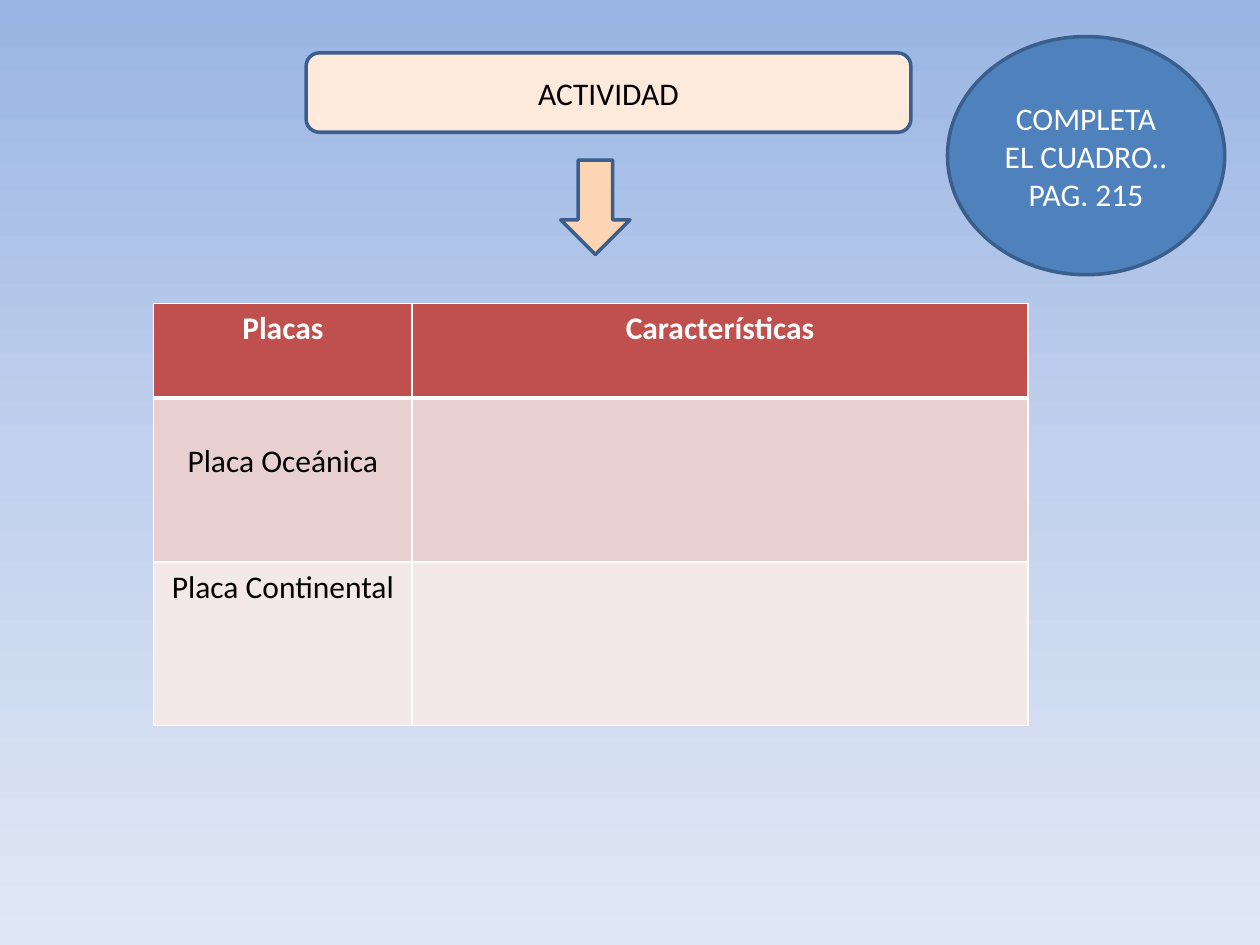
from copy import deepcopy
from dataclasses import dataclass

from lxml.etree import SubElement
from pptx import Presentation
from pptx.dml.color import RGBColor
from pptx.enum.shapes import MSO_SHAPE
from pptx.enum.text import MSO_ANCHOR, PP_ALIGN
from pptx.oxml.ns import qn
from pptx.util import Inches, Pt


@dataclass(frozen=True)
class Theme:
    """Colours and type sizes of the slide."""
    sky: tuple = ((0, "9AB5E4"), (0.5, "C2D1ED"), (1, "E1E8F5"))
    title: str = "FDEADA"
    arrow: str = "FCD5B5"
    note: str = "4F81BD"
    outline: str = "3A5F8C"
    header: str = "C0504D"
    bands: tuple = ("E8D0D0", "F4E9E9")
    dark: str = "000000"
    light: str = "FFFFFF"
    font: str = "Calibri"
    size: int = 18
    outline_width: int = 2
    border: int = 1
    header_border: int = 3


THEME = Theme()


def paint_background(slide):
    """Fill the slide with a three-stop gradient from top to bottom."""
    fill = slide.background.fill
    fill.gradient()
    fill.gradient_angle = 270
    stop_list = slide.element.find(".//" + qn("a:gsLst"))
    stop_list.append(deepcopy(stop_list[0]))
    for stop, (position, color) in zip(fill.gradient_stops, THEME.sky):
        stop.position = position
        stop.color.rgb = RGBColor.from_string(color)


def write_text(frame, lines, color, bold=False):
    """Write centred paragraphs into a text frame."""
    font_format = {"name": THEME.font, "size": Pt(THEME.size), "bold": bold}
    for index, line in enumerate(lines):
        paragraph = frame.add_paragraph() if index else frame.paragraphs[0]
        paragraph.alignment = PP_ALIGN.CENTER
        run = paragraph.add_run()
        run.text = line
        run.font.color.rgb = RGBColor.from_string(color)
        for key, value in font_format.items():
            setattr(run.font, key, value)


def add_figure(slide, preset, box, fill, lines=(), color=THEME.dark):
    """Place an outlined preset shape with optional text in the box."""
    figure = slide.shapes.add_shape(preset, *map(Inches, box))
    figure.shadow.inherit = False
    figure.fill.solid()
    figure.fill.fore_color.rgb = RGBColor.from_string(fill)
    figure.line.color.rgb = RGBColor.from_string(THEME.outline)
    figure.line.width = Pt(THEME.outline_width)
    frame_format = {"word_wrap": True, "vertical_anchor": MSO_ANCHOR.MIDDLE}
    for key, value in frame_format.items():
        setattr(figure.text_frame, key, value)
    write_text(figure.text_frame, lines, color)


def style_cell(cell, fill, bottom):
    """Give a cell its white borders and its fill."""
    properties = cell._tc.get_or_add_tcPr()
    widths = {"L": THEME.border, "R": THEME.border, "T": THEME.border, "B": bottom}
    for side, width in widths.items():
        border = SubElement(properties, qn(f"a:ln{side}"), w=str(Pt(width)))
        paint = SubElement(border, qn("a:solidFill"))
        SubElement(paint, qn("a:srgbClr"), val=THEME.light)
    cell.fill.solid()
    cell.fill.fore_color.rgb = RGBColor.from_string(fill)


def add_plates_table(slide, box, column_widths, row_heights, rows):
    """Place the table of plates, its header row first, in the box."""
    table = slide.shapes.add_table(
        len(rows), len(column_widths), *map(Inches, box)
    ).table
    for column, width in zip(table.columns, column_widths):
        column.width = Inches(width)
    for row, height in zip(table.rows, row_heights):
        row.height = Inches(height)
    fills = (THEME.header, *THEME.bands)
    for r, (texts, fill) in enumerate(zip(rows, fills)):
        is_header = r == 0
        bottom = THEME.header_border if is_header else THEME.border
        for c, text in enumerate(texts):
            cell = table.cell(r, c)
            style_cell(cell, fill, bottom)
            if text:
                color = THEME.light if is_header else THEME.dark
                write_text(cell.text_frame, [text], color, is_header)
    table.cell(1, 0).margin_top = Inches(0.35)


def build_activity_slide(presentation):
    """Build the activity slide about tectonic plates."""
    slide = presentation.slides.add_slide(presentation.slide_layouts[6])
    paint_background(slide)
    add_figure(slide, MSO_SHAPE.ROUNDED_RECTANGLE, (2.43, 0.42, 4.8, 0.63),
               THEME.title, ["ACTIVIDAD"])
    add_figure(slide, MSO_SHAPE.DOWN_ARROW, (4.45, 1.27, 0.55, 0.75), THEME.arrow)
    add_figure(slide, MSO_SHAPE.OVAL, (7.52, 0.29, 2.2, 1.89), THEME.note,
               ["COMPLETA EL CUADRO..", "PAG. 215"], THEME.light)
    add_plates_table(
        slide, (1.22, 2.41, 6.94, 3.35), (2.05, 4.89), (0.75, 1.3, 1.3),
        (("Placas", "Características"),
         ("Placa Oceánica", ""),
         ("Placa Continental", "")),
    )


def main():
    """Create the presentation and save it."""
    presentation = Presentation()
    presentation.slide_width = Inches(10)
    presentation.slide_height = Inches(7.5)
    build_activity_slide(presentation)
    presentation.save("out.pptx")


if __name__ == "__main__":
    main()
